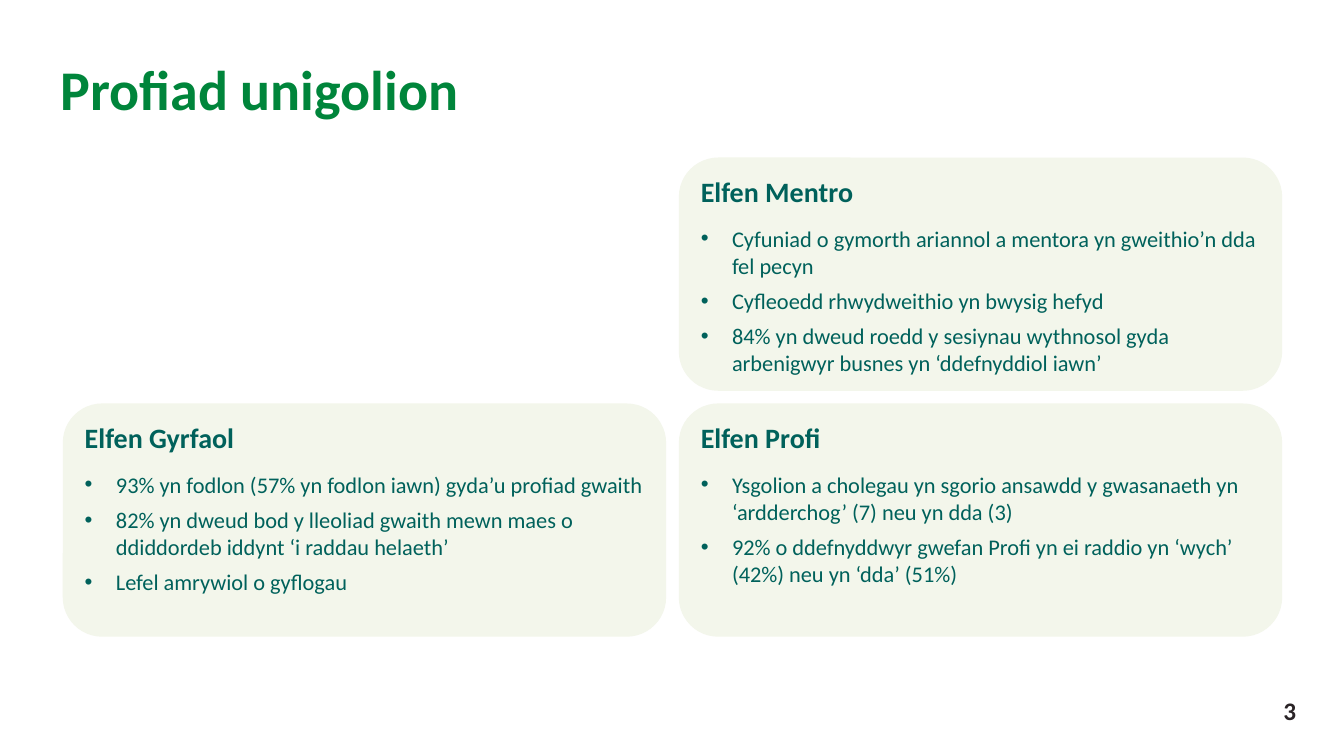
import pptx
import pptx.dml.color
import pptx.enum.shapes
import pptx.enum.text
import pptx.oxml.ns
import pptx.util
import lxml.etree
from dataclasses import dataclass

Inches = pptx.util.Inches
Pt = pptx.util.Pt
RGB = pptx.dml.color.RGBColor.from_string
Anchor = pptx.enum.text.MSO_ANCHOR
Align = pptx.enum.text.PP_ALIGN


@dataclass(frozen=True)
class Theme:
    font: str = "Calibri"
    green: str = "00853B"
    teal: str = "00615B"
    dark: str = "2A2427"
    card: str = "F3F6EB"
    title: int = 40
    heading: int = 20
    body: int = 16
    number: int = 18


theme = Theme()


def add_run(p, text, size, color, bold):
    r = p.add_run()
    r.text = text
    r.font.name = theme.font
    r.font.size = Pt(size)
    r.font.bold = bold
    r.font.color.rgb = RGB(color)


def set_frame(tf, anchor, inset=None):
    tf.word_wrap = True
    tf.auto_size = pptx.enum.text.MSO_AUTO_SIZE.NONE
    tf.vertical_anchor = anchor
    if inset is not None:
        tf.margin_left = tf.margin_right = Inches(inset)
        tf.margin_top = tf.margin_bottom = Inches(inset)


prs = pptx.Presentation()
prs.slide_width = Inches(13.33)
prs.slide_height = Inches(7.5)
s = prs.slides.add_slide(prs.slide_layouts[5])

title = s.shapes.title
title.left, title.top = Inches(0.6), Inches(0)
title.width, title.height = Inches(9), Inches(1.22)
set_frame(title.text_frame, Anchor.BOTTOM, 0)
p = title.text_frame.paragraphs[0]
p.alignment = Align.LEFT
p.line_spacing = 0.9
add_run(p, "Profiad unigolion", theme.title, theme.green, True)

left, right = 0.63, 6.74
upper, lower = 1.57, 4.01
cards = [
    (left, lower, "Elfen Gyrfaol", [
        "93% yn fodlon (57% yn fodlon iawn) gyda’u profiad gwaith",
        "82% yn dweud bod y lleoliad gwaith mewn maes o ddiddordeb iddynt ‘i raddau helaeth’",
        "Lefel amrywiol o gyflogau",
    ]),
    (right, lower, "Elfen Profi", [
        "Ysgolion a cholegau yn sgorio ansawdd y gwasanaeth yn ‘ardderchog’ (7) neu yn dda (3)",
        "92% o ddefnyddwyr gwefan Profi yn ei raddio yn ‘wych’ (42%) neu yn ‘dda’ (51%)",
    ]),
    (right, upper, "Elfen Mentro", [
        "Cyfuniad o gymorth ariannol a mentora yn gweithio’n dda fel pecyn",
        "Cyfleoedd rhwydweithio yn bwysig hefyd",
        "84% yn dweud roedd y sesiynau wythnosol gyda arbenigwyr busnes yn ‘ddefnyddiol iawn’",
    ]),
]

for x, y, heading, bullets in cards:
    sp = s.shapes.add_shape(pptx.enum.shapes.MSO_SHAPE.ROUNDED_RECTANGLE,
                            Inches(x), Inches(y), Inches(5.97), Inches(2.3))
    sp.shadow.inherit = False
    sp.fill.solid()
    sp.fill.fore_color.rgb = RGB(theme.card)
    sp.line.color.rgb = RGB(theme.card)
    sp.line.width = Pt(1)
    tf = sp.text_frame
    set_frame(tf, Anchor.TOP)
    p = tf.paragraphs[0]
    p.alignment = Align.LEFT
    p.space_after = Pt(12)
    add_run(p, heading, theme.heading, theme.teal, True)
    for text in bullets:
        p = tf.add_paragraph()
        pPr = p._p.get_or_add_pPr()
        pPr.set("marL", str(Inches(0.31)))
        pPr.set("indent", str(-Inches(0.31)))
        buFont = lxml.etree.SubElement(pPr, pptx.oxml.ns.qn("a:buFont"))
        buFont.set("typeface", "Arial")
        buChar = lxml.etree.SubElement(pPr, pptx.oxml.ns.qn("a:buChar"))
        buChar.set("char", "•")
        p.alignment = Align.LEFT
        p.space_after = Pt(6)
        add_run(p, text, theme.body, theme.teal, False)

number = s.shapes.add_textbox(Inches(12.73), Inches(6.9), Inches(0.6), Inches(0.6))
set_frame(number.text_frame, Anchor.TOP, 0)
add_run(number.text_frame.paragraphs[0], "3", theme.number, theme.dark, True)

prs.save("out.pptx")
